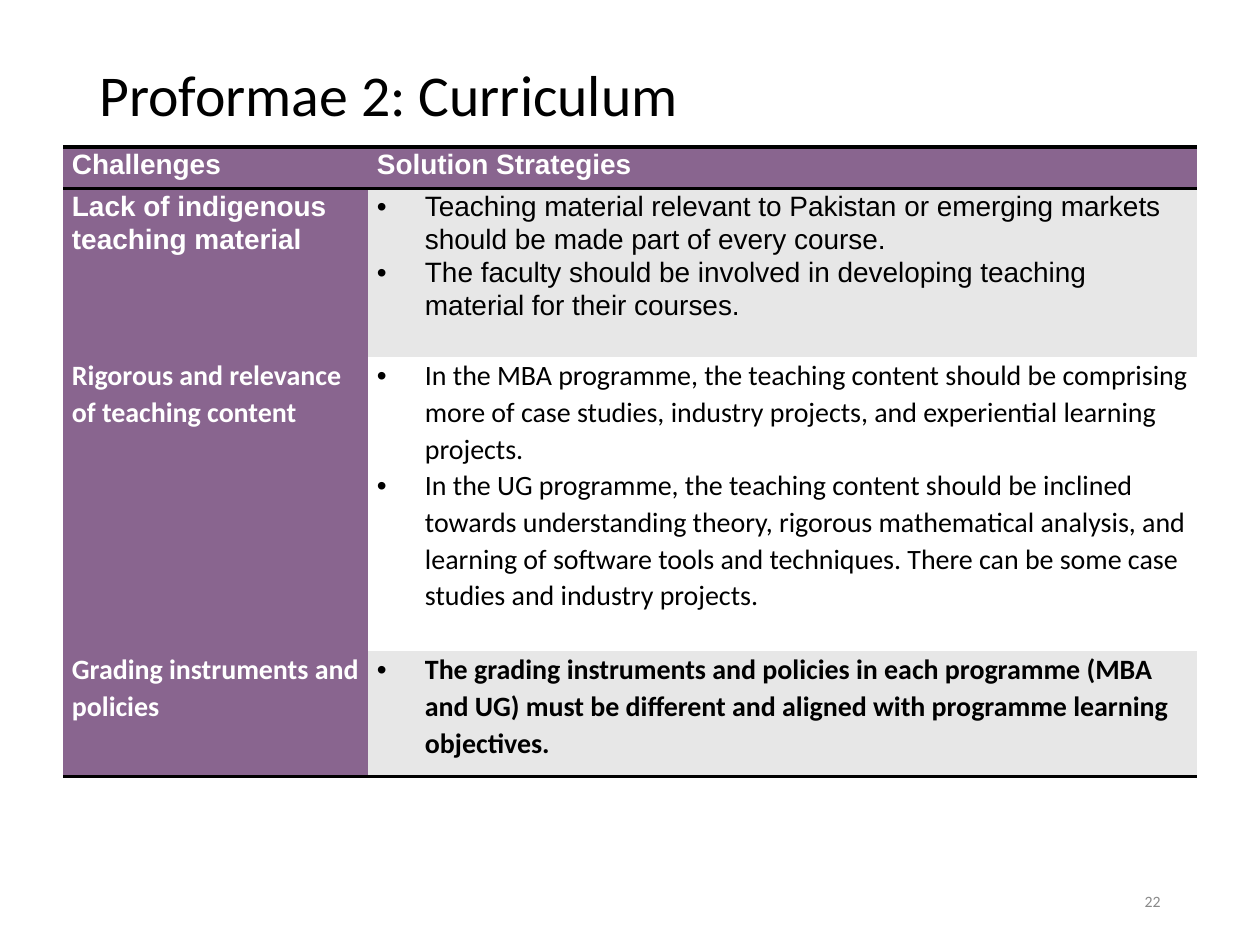
from lxml.etree import SubElement
from pptx import Presentation
from pptx.dml.color import RGBColor
from pptx.enum.text import MSO_ANCHOR, PP_ALIGN
from pptx.oxml.ns import qn
from pptx.util import Pt

EMU_PER_PX = 914400 / 126
PURPLE, GREY, WHITE, BLACK = "89658F", "E7E7E7", "FFFFFF", "000000"
COLUMN_WIDTHS = [305, 829]
ROW_HEIGHTS = [42, 168, 294, 126]
RULED_EDGES = {0, 1, len(ROW_HEIGHTS)}
LINE_SPACING = 1.07
BULLET_INDENT = 48

HEADINGS = ["Challenges", "Solution Strategies"]
CHALLENGES = [
    ("Lack of indigenous teaching material", "Arial", GREY, False, [
        "Teaching material relevant to Pakistan or emerging markets should be made part of every course.",
        "The faculty should be involved in developing teaching material for their courses.",
    ]),
    ("Rigorous and relevance of teaching content", "Calibri", WHITE, False, [
        "In the MBA programme, the teaching content should be comprising more of case studies, "
        "industry projects, and experiential learning projects.",
        "In the UG programme, the teaching content should be inclined towards understanding theory, "
        "rigorous mathematical analysis, and learning of software tools and techniques. "
        "There can be some case studies and industry projects.",
    ]),
    ("Grading instruments and policies", "Calibri", GREY, True, [
        "The grading instruments and policies in each programme (MBA and UG) must be different "
        "and aligned with programme learning objectives.",
    ]),
]


def px(length):
    return round(length * EMU_PER_PX)


def rgb(value):
    return RGBColor.from_string(value)


def add_run(paragraph, text, font, size, color, bold=False):
    run = paragraph.add_run()
    run.text = text
    run.font.name = font
    run.font.size = Pt(size)
    run.font.bold = bold
    run.font.color.rgb = rgb(color)


def add_label(slide, box, text, size, color, align=PP_ALIGN.LEFT, spacing=1.0):
    frame = slide.shapes.add_textbox(*map(px, box)).text_frame
    frame.word_wrap = True
    frame.vertical_anchor = MSO_ANCHOR.MIDDLE
    paragraph = frame.paragraphs[0]
    paragraph.alignment = align
    paragraph.line_spacing = spacing
    add_run(paragraph, text, "Calibri", size, color)


def add_bullet(paragraph):
    properties = paragraph._p.get_or_add_pPr()
    properties.set("marL", str(px(BULLET_INDENT)))
    properties.set("indent", str(-px(BULLET_INDENT)))
    SubElement(properties, qn("a:buFont"), typeface="Arial")
    SubElement(properties, qn("a:buChar"), char="•")


def set_borders(cell, row):
    properties = cell._tc.get_or_add_tcPr()
    ruled = {"lnT": row in RULED_EDGES, "lnB": row + 1 in RULED_EDGES}
    for side in ("lnL", "lnR", "lnT", "lnB"):
        border = SubElement(properties, qn(f"a:{side}"), w=str(Pt(2)))
        if ruled.get(side):
            fill = SubElement(border, qn("a:solidFill"))
            SubElement(fill, qn("a:srgbClr"), val=BLACK)
        else:
            SubElement(border, qn("a:noFill"))


def fill_cell(table, row, column, texts, font, color, background, bold=True, bulleted=False):
    cell = table.cell(row, column)
    cell.margin_left = cell.margin_right = px(9)
    cell.margin_top = cell.margin_bottom = 0
    set_borders(cell, row)
    cell.fill.solid()
    cell.fill.fore_color.rgb = rgb(background)
    frame = cell.text_frame
    for index, text in enumerate(texts):
        paragraph = frame.add_paragraph() if index else frame.paragraphs[0]
        paragraph.line_spacing = LINE_SPACING
        if bulleted:
            add_bullet(paragraph)
        add_run(paragraph, text, font, 16, color, bold)


def add_curriculum_table(slide):
    table = slide.shapes.add_table(
        len(ROW_HEIGHTS), len(COLUMN_WIDTHS), px(63), px(147),
        px(sum(COLUMN_WIDTHS)), px(sum(ROW_HEIGHTS))).table
    table.first_row = table.horz_banding = False
    for column, width in zip(table.columns, COLUMN_WIDTHS):
        column.width = px(width)
    for row, height in zip(table.rows, ROW_HEIGHTS):
        row.height = px(height)
    for column, heading in enumerate(HEADINGS):
        fill_cell(table, 0, column, [heading], "Arial", WHITE, PURPLE)
    for row, (challenge, font, background, bold, strategies) in enumerate(CHALLENGES, 1):
        fill_cell(table, row, 0, [challenge], font, WHITE, PURPLE)
        fill_cell(table, row, 1, strategies, font, BLACK, background, bold, bulleted=True)


def main():
    presentation = Presentation()
    presentation.slide_width, presentation.slide_height = px(1260), px(945)
    slide = presentation.slides.add_slide(presentation.slide_layouts[6])
    add_label(slide, (87, 50, 1086, 95), "Proformae 2: Curriculum", 33, BLACK, spacing=0.9)
    add_label(slide, (890, 876, 283, 50), "22", 9, "898989", PP_ALIGN.RIGHT)
    add_curriculum_table(slide)
    presentation.save("out.pptx")


if __name__ == "__main__":
    main()
